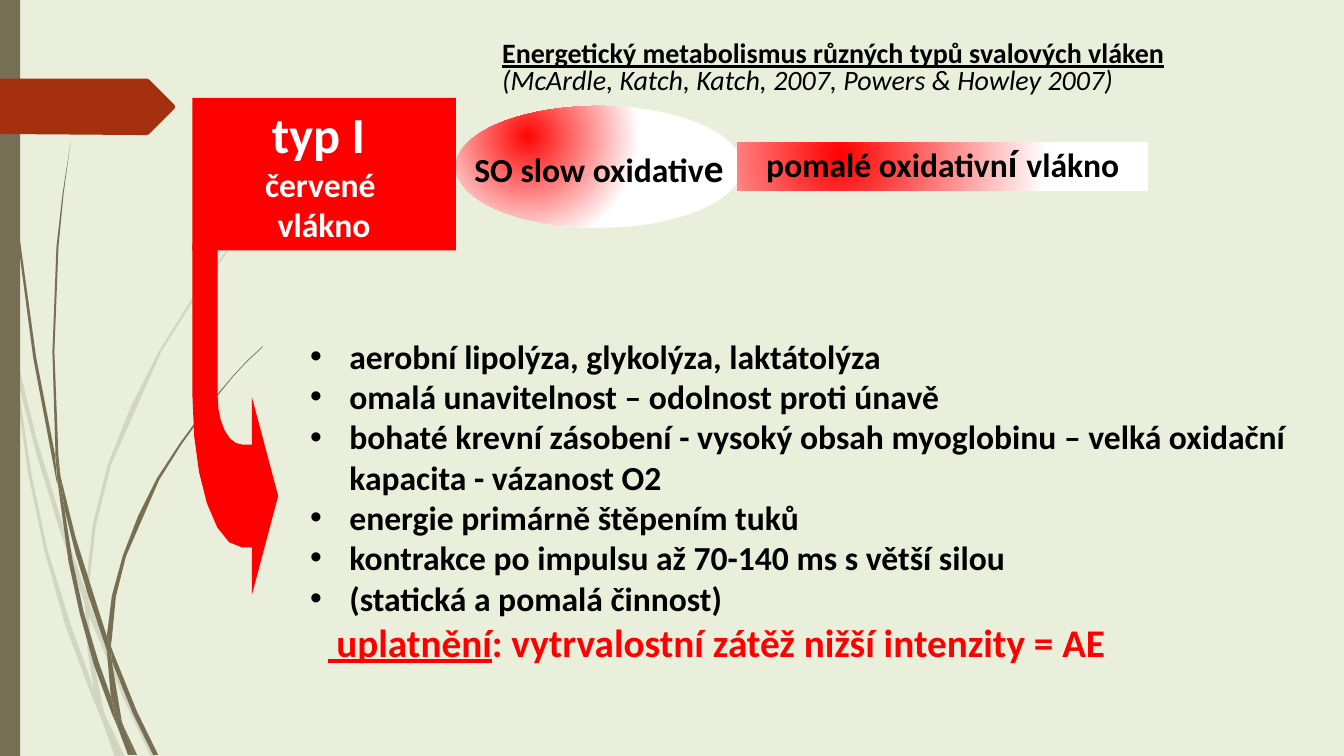
from math import cos, pi, sin

from lxml.etree import SubElement
from pptx import Presentation
from pptx.dml.color import RGBColor
from pptx.enum.shapes import MSO_SHAPE as Preset
from pptx.enum.text import MSO_ANCHOR as Anchor, MSO_AUTO_SIZE as AutoSize, PP_ALIGN as Align
from pptx.oxml.ns import qn
from pptx.util import Cm, Pt

BACKGROUND = RGBColor(0xEA, 0xEF, 0xDB)
OLIVE = RGBColor(0x76, 0x6F, 0x54)
RUST = RGBColor(0xA5, 0x30, 0x10)
RED = RGBColor(0xFF, 0x00, 0x00)
LIGHT_RED = RGBColor(0xFF, 0x05, 0x05)
WHITE = RGBColor(0xFF, 0xFF, 0xFF)
BLACK = RGBColor(0x00, 0x00, 0x00)
FONT = "Calibri"
GRID = 0.0254  # cm in one grid unit of the outlines below

# Pieces of the grass blades, in grid units
PALE_GRASS = [
    [(11, 350), (9, 322), (0, 282), (0, 299), (10, 344)],
    [(58, 522), (84, 599), (85, 586), (62, 520), (36, 434), (14, 345), (17, 376), (36, 450)],
    [(92, 607), (88, 596), (88, 610), (123, 694), (150, 751), (155, 751), (127, 692)],
    [(119, 751), (124, 751), (105, 711)],
    [(93, 683), (70, 619), (47, 545), (31, 469), (17, 376), (11, 350), (28, 470), (44, 546),
     (65, 621), (92, 693), (101, 714), (99, 707)],
    [(84, 599), (87, 646), (93, 683), (96, 692), (105, 711), (103, 706), (91, 646), (88, 610), (88, 608)],
    [(88, 584), (95, 522), (110, 462), (160, 349), (192, 298), (229, 245), (268, 198), (290, 175),
     (312, 154), (312, 153), (289, 175), (268, 197), (228, 244), (190, 297), (158, 348), (130, 403),
     (107, 461), (92, 521), (85, 584), (85, 586), (88, 596)],
    [(101, 714), (114, 751), (119, 751)],
    [(88, 608), (88, 610), (88, 596), (85, 586), (84, 599)],
    [(96, 692), (93, 683), (99, 707), (101, 714), (119, 751), (105, 711)],
]
DARK_GRASS = [
    [(7, 110), (17, 233), (33, 355), (56, 477), (57, 481), (55, 457), (55, 453), (36, 355), (19, 232),
     (8, 109), (5, 48), (4, 0), (3, 0), (4, 48)],
    [(88, 592), (106, 645), (106, 631), (93, 590), (75, 533), (60, 472), (64, 505), (75, 549)],
    [(113, 649), (110, 641), (111, 656), (132, 708), (152, 749), (157, 749), (136, 706)],
    [(110, 691), (98, 657), (83, 607), (72, 556), (64, 505), (57, 477), (68, 557), (79, 608),
     (93, 659), (111, 708), (117, 722), (116, 717)],
    [(60, 472), (58, 453), (54, 349), (58, 245), (63, 193), (70, 141), (62, 193), (56, 245),
     (52, 349), (55, 449)],
    [(133, 749), (136, 749), (122, 719)],
    [(57, 477), (64, 505), (60, 472), (55, 449), (55, 453)],
    [(111, 633), (115, 592), (125, 552), (158, 476), (180, 441), (205, 406), (231, 374), (245, 359),
     (261, 344), (260, 344), (245, 358), (231, 373), (204, 405), (179, 439), (156, 474), (137, 512),
     (122, 551), (111, 591), (106, 631), (110, 641)],
    [(117, 722), (127, 749), (131, 749)],
    [(106, 645), (110, 691), (116, 706), (122, 719), (121, 716), (111, 656), (109, 651)],
    [(106, 645), (109, 651), (111, 656), (110, 641), (106, 631)],
    [(116, 706), (110, 691), (116, 717), (117, 722), (130, 749), (133, 749), (122, 719)],
]
PENNANT = [(174, 106), (173, 108), (148, 133), (146, 134), (136, 134), (0, 133), (0, 78), (136, 78),
           (146, 78), (148, 79), (173, 104)]

BULLETS = [
    "aerobní lipolýza, glykolýza, laktátolýza",
    "omalá unavitelnost – odolnost proti únavě",
    "bohaté krevní zásobení - vysoký obsah myoglobinu – velká oxidační kapacita - vázanost O2",
    "energie primárně štěpením tuků",
    "kontrakce po impulsu až 70-140 ms s větší silou",
    "(statická a pomalá činnost)",
]


def write(paragraph, text, size=24, color=BLACK, bold=True, italic=False, underline=False):
    run = paragraph.add_run()
    run.text = text
    font = run.font
    font.name, font.size, font.color.rgb = FONT, Pt(size), color
    font.bold, font.italic, font.underline = bold, italic, underline


def next_paragraph(frame, align=Align.LEFT, spacing=1.0, margin=0, hanging=0, bullet=None):
    first = frame.paragraphs[0]
    paragraph = frame.add_paragraph() if first.runs else first
    paragraph.alignment, paragraph.line_spacing = align, spacing
    paragraph.space_before = paragraph.space_after = Pt(0)
    properties = paragraph._p.get_or_add_pPr()
    properties.set("marL", str(Cm(margin)))
    properties.set("indent", str(-Cm(hanging)))
    if bullet:
        SubElement(properties, qn("a:buFont"), typeface="Arial")
        SubElement(properties, qn("a:buChar"), char=bullet)
    else:
        SubElement(properties, qn("a:buNone"))
    return paragraph


def paint(shape, color, opacity=100):
    shape.shadow.inherit = False
    shape.line.fill.background()
    shape.fill.solid()
    shape.fill.fore_color.rgb = color
    if opacity < 100:
        color_element = shape._element.spPr.find(".//" + qn("a:srgbClr"))
        SubElement(color_element, qn("a:alpha"), val=str(opacity * 1000))


def paint_glow(shape, color, end):
    """Fade from a colour near the upper left to white."""
    shape.fill.gradient()
    for stop, rgb, position in zip(shape.fill.gradient_stops, (color, WHITE), (0, end)):
        stop.color.rgb, stop.position = rgb, position
    gradient = shape._element.spPr.find(qn("a:gradFill"))
    gradient.remove(gradient.find(qn("a:lin")))
    circle = SubElement(gradient, qn("a:path"), path="circle")
    SubElement(circle, qn("a:fillToRect"), l="50000", t="50000", r="100000", b="100000")


def add_block(slide, preset, box, color, anchor=Anchor.TOP, wrap=True):
    shape = slide.shapes.add_shape(preset, *map(Cm, box))
    paint(shape, color)
    shape.text_frame.vertical_anchor = anchor
    shape.text_frame.word_wrap = wrap
    return shape


def add_outline(slide, points, color, opacity=100):
    points = [(Cm(x * GRID), Cm(y * GRID)) for x, y in points]
    builder = slide.shapes.build_freeform(*points[0], scale=1.0)
    builder.add_line_segments(points[1:], close=True)
    paint(builder.convert_to_shape(), color, opacity)


def quarter_arc(center, radius_x, radius_y, steps=6):
    """From the left end of an ellipse down to its bottom."""
    angles = [step * pi / 2 / steps for step in range(steps + 1)]
    return [(center[0] - radius_x * cos(a), center[1] + radius_y * sin(a)) for a in angles]


def place_text(slide, placeholder, box):
    """Move a placeholder in front of the shapes and return its text frame."""
    placeholder.left, placeholder.top, placeholder.width, placeholder.height = map(Cm, box)
    slide.shapes._spTree.append(placeholder._element)
    frame = placeholder.text_frame
    frame.word_wrap, frame.auto_size, frame.vertical_anchor = True, AutoSize.NONE, Anchor.TOP
    return frame


def add_decoration(slide):
    for grass, opacity in ((PALE_GRASS, 20), (DARK_GRASS, 100)):
        for piece in grass:
            add_outline(slide, piece, OLIVE, opacity)
    add_block(slide, Preset.RECTANGLE, (0, 0, 0.51, 19.05), OLIVE)
    add_outline(slide, PENNANT, RUST)


def add_fibre_labels(slide):
    oval = add_block(slide, Preset.OVAL, (11.49, 2.67, 7.21, 3.07), WHITE, Anchor.MIDDLE, False)
    paint_glow(oval, LIGHT_RED, 0.72)
    paragraph = next_paragraph(oval.text_frame, Align.CENTER)
    write(paragraph, "SO slow oxidativ")
    write(paragraph, "e", size=28)

    fibre = add_block(slide, Preset.RECTANGLE, (4.85, 2.47, 6.64, 3.84), RED)
    for text, size in (("typ I ", 36), ("červené ", 24), ("vlákno", 24)):
        write(next_paragraph(fibre.text_frame, Align.CENTER), text, size=size, color=WHITE)

    translation = add_block(slide, Preset.RECTANGLE, (18.59, 3.59, 10.34, 1.22), WHITE)
    paint_glow(translation, RED, 1.0)
    paragraph = next_paragraph(translation.text_frame, Align.CENTER, spacing=0.8)
    for text, size in (("pomalé oxidativn", 24), ("í ", 28), ("vlákno", 24)):
        write(paragraph, text, size=size)


def add_bent_arrow(slide):
    bend = (240, 394)
    inner, outer = quarter_arc(bend, 24, 47), quarter_arc(bend, 49, 149)
    head = [(250, 441), (250, 394), (276, 492), (250, 590), (250, 543)]
    add_outline(slide, [(191, 242), (216, 242), *inner, *head, *outer[::-1]], RED)


def main():
    presentation = Presentation()
    presentation.slide_width, presentation.slide_height = Cm(33.87), Cm(19.05)
    slide = presentation.slides.add_slide(presentation.slide_layouts[1])
    slide.background.fill.solid()
    slide.background.fill.fore_color.rgb = BACKGROUND

    add_decoration(slide)
    add_fibre_labels(slide)
    add_bent_arrow(slide)

    # Properties and use of the fibre
    body = place_text(slide, slide.placeholders[1], (7.56, 8.33, 25.86, 10.01))
    for text in BULLETS:
        write(next_paragraph(body, margin=0.99, hanging=0.99, bullet="•"), text)
    usage = next_paragraph(body, margin=0.44)
    write(usage, " uplatnění", size=28, color=RED, underline=True)
    write(usage, ": vytrvalostní zátěž nižší intenzity = AE", size=28, color=RED)

    # Heading with its sources
    title = place_text(slide, slide.shapes.title, (12.4, 0.94, 21.01, 1.63))
    for text, look in (
        ("Energetický metabolismus různých typů svalových vláken", {"underline": True}),
        ("(McArdle, Katch, Katch, 2007, Powers & Howley 2007)", {"bold": False, "italic": True}),
    ):
        write(next_paragraph(title, spacing=0.8, margin=1.7, hanging=1.7), text, size=20, **look)

    presentation.save("out.pptx")


if __name__ == "__main__":
    main()
